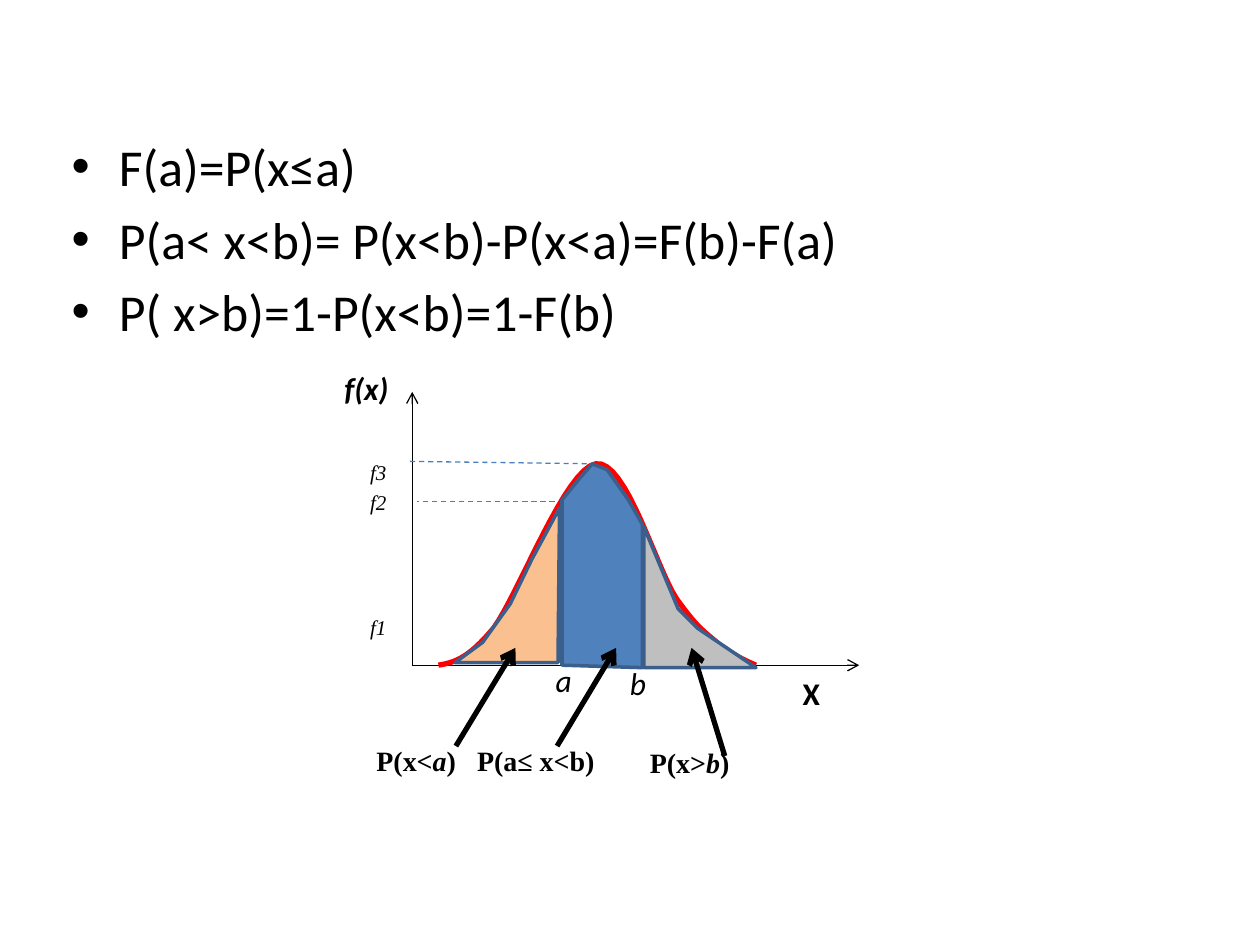
"""Build a slide on areas under a density curve."""
from pptx import Presentation, util as u
from pptx.dml.color import RGBColor
from pptx.enum import dml, text
from pptx.oxml.ns import qn
from lxml import etree

RULES = ["F(a)=P(x≤a)", "P(a< x<b)= P(x<b)-P(x<a)=F(b)-F(a)", "P( x>b)=1-P(x<b)=1-F(b)"]

AXES = [((8.31, 13.41), (8.31, 7.9)), ((8.31, 13.41), (17.32, 13.41))]
GUIDES = [
    ((12.01, 9.35), (8.2, 9.3), "4B7EBC"),
    ((11.18, 10.11), (8.41, 10.11), "4B7EBC"),
    ((11.3, 10.13), (11.33, 13.31), "0000FF"),
]
ARROWS = [
    ((11.23, 15.04), (12.42, 13.06)),
    ((14.61, 15.24), (13.94, 13.06)),
    ((9.19, 15.04), (10.39, 13.06)),
]
CURVE = [
    (8.84, 13.41), (9.12, 13.36), (9.42, 13.31), (9.96, 12.65),
    (10.46, 11.96), (11.4, 9.45), (12.01, 9.35),
    (12.62, 9.25), (13.23, 11.46), (13.64, 12.07),
    (14.05, 12.65), (14.2, 12.73), (14.45, 12.95),
    (14.73, 13.18), (15.01, 13.31), (15.24, 13.41),
]
AREAS = [
    ("FAC090", [(9.17, 13.36), (9.73, 12.95), (10.29, 12.17), (10.72, 11.28),
                (11.28, 10.24), (11.25, 13.36)]),
    ("4F81BD", [(11.33, 13.41), (11.33, 10.08), (11.68, 9.65), (11.94, 9.35),
                (12.24, 9.47), (12.67, 10.08), (12.95, 10.57), (12.95, 13.46)]),
    ("BFBFBF", [(12.98, 13.46), (12.98, 10.62), (13.67, 12.27), (14.07, 12.67),
                (15.24, 13.46)]),
]

BOLD, SLANT, BOTH = {"bold": True}, {"italic": True}, {"bold": True, "italic": True}
STYLES = {
    "tick": {"name": "Times New Roman", "size": u.Pt(12)},
    "prob": {"name": "Times New Roman", "size": u.Pt(16)},
    "axis": {"name": "Calibri", "size": u.Pt(18)},
}
HEIGHTS = {"tick": 0.76, "prob": 0.94, "axis": 1.02}
LABELS = [
    (6.55, 7.32, 2.18, "axis", [(" ", SLANT), ("f(x)", BOTH)]),
    (15.93, 13.46, 1.19, "axis", [("X", BOLD)]),
    (10.95, 13.21, 1.19, "axis", [("a", SLANT)]),
    (12.45, 13.26, 1.19, "axis", [("b", SLANT)]),
    (7.21, 12.27, 1.27, "tick", [("f1", SLANT)]),
    (7.21, 9.75, 1.22, "tick", [("f2", SLANT)]),
    (7.21, 9.14, 1.22, "tick", [("f3", SLANT)]),
    (7.34, 14.86, 2.77, "prob", [("P(x<", BOLD), ("a", BOTH), (")", BOLD)]),
    (9.37, 14.86, 3.38, "prob", [("P(a≤ x<b)", BOLD)]),
    (12.85, 14.91, 2.77, "prob", [("P(x>", BOLD), ("b", BOTH), (")", BOLD)]),
]


def tint(part, code):
    part.rgb = RGBColor.from_string(code)


def style(font, form):
    for key, val in form.items():
        setattr(font, key, val)
    tint(font.color, "000000")


def pen(line, code, width):
    tint(line.color, code)
    line.width = u.Pt(width)


def link(page, start, end, code="000000", width=0.75, dash=False, head=False):
    line = page.shapes.add_connector(1, *map(u.Cm, start + end))
    pen(line.line, code, width)
    if dash:
        line.line.dash_style = dml.MSO_LINE.DASH
    if head:
        etree.SubElement(line.line._get_or_add_ln(), qn("a:tailEnd"), type="arrow")
    etree.SubElement(line._element.spPr, qn("a:effectLst"))


def trace(page, points, code, width, fill=None):
    spots = [(u.Cm(x), u.Cm(y)) for x, y in points]
    maker = page.shapes.build_freeform(*spots[0])
    maker.add_line_segments(spots[1:], close=fill is not None)
    shape = maker.convert_to_shape()
    shape.shadow.inherit = False
    pen(shape.line, code, width)
    if fill:
        shape.fill.solid()
        tint(shape.fill.fore_color, fill)
    else:
        shape.fill.background()


def bend(knots, steps=16):
    out = [knots[0]]
    for n in range(0, len(knots) - 1, 3):
        for s in range(1, steps + 1):
            t = s / steps
            mix = ((1 - t) ** 3, 3 * t * (1 - t) ** 2, 3 * t * t * (1 - t), t ** 3)
            out.append(tuple(sum(m * k[i] for m, k in zip(mix, knots[n:n + 4]))
                             for i in (0, 1)))
    return out


def label(page, left, top, width, kind, runs):
    box = page.shapes.add_textbox(*map(u.Cm, (left, top, width, HEIGHTS[kind])))
    frame = box.text_frame
    frame.word_wrap = True
    for words, form in runs:
        run = frame.paragraphs[0].add_run()
        run.text = words
        style(run.font, {**STYLES[kind], **form})


def rules(page):
    body = page.placeholders[1]
    body.left, body.top, body.width, body.height = map(u.Cm, (1.19, 2.59, 20.75, 4.09))
    frame = body.text_frame
    frame.text = "\n".join(RULES)
    frame.auto_size = text.MSO_AUTO_SIZE.NONE
    for para in frame.paragraphs:
        style(para.runs[0].font, {"name": "Calibri", "size": u.Pt(29.6)})


def main():
    deck = Presentation()
    deck.slide_width, deck.slide_height = u.Cm(25.4), u.Cm(19.05)
    page = deck.slides.add_slide(deck.slide_layouts[1])
    title = page.shapes.title._element
    title.getparent().remove(title)
    rules(page)
    for start, end in AXES:
        link(page, start, end, head=True)
    for start, end, code in GUIDES:
        link(page, start, end, code, dash=True)
    trace(page, bend(CURVE), "FF0000", 3)
    for fill, points in AREAS:
        trace(page, points, "3A5F8C", 2, fill)
    for item in LABELS:
        label(page, *item)
    for start, end in ARROWS:
        link(page, start, end, width=3, head=True)
    deck.save("out.pptx")


if __name__ == "__main__":
    main()
